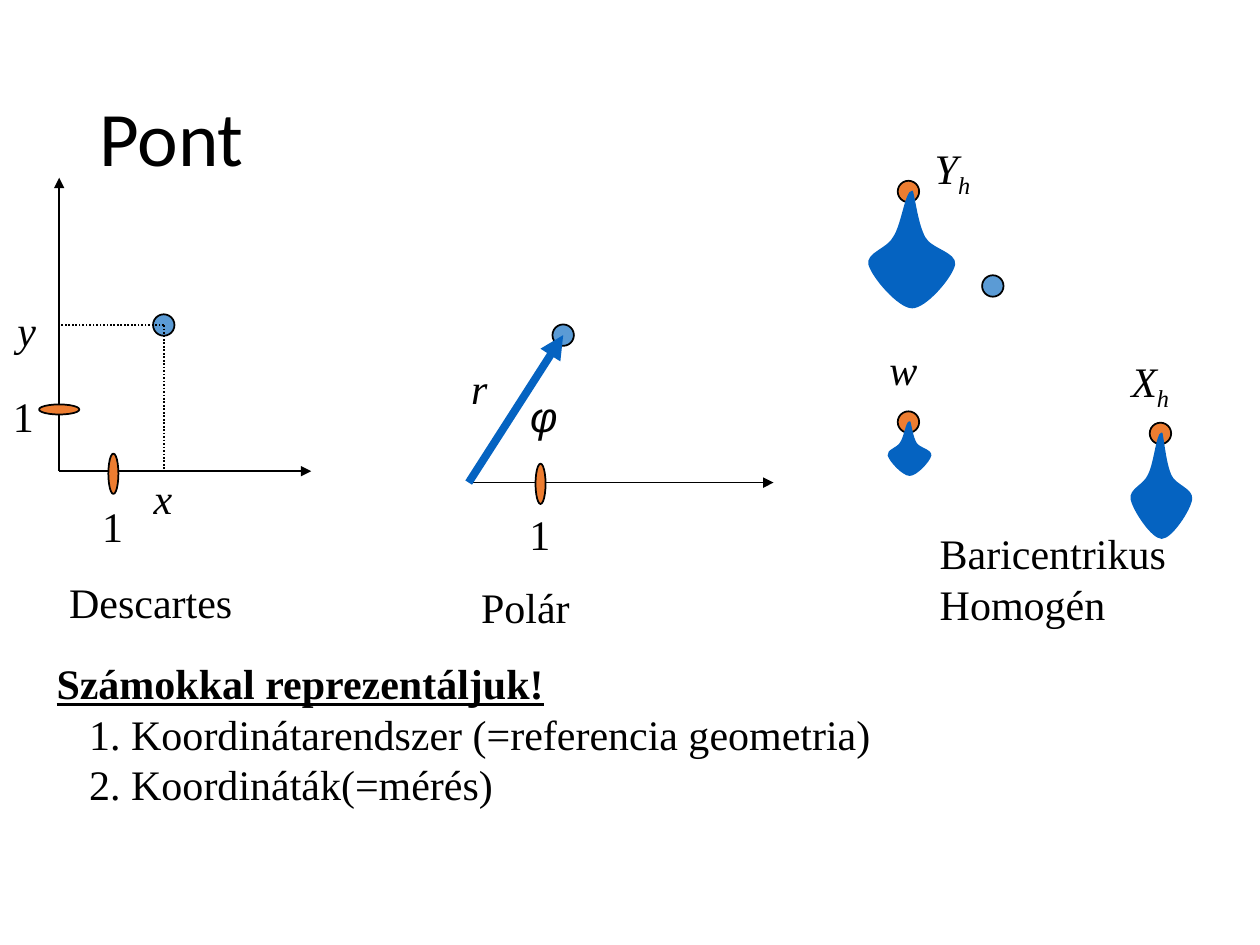
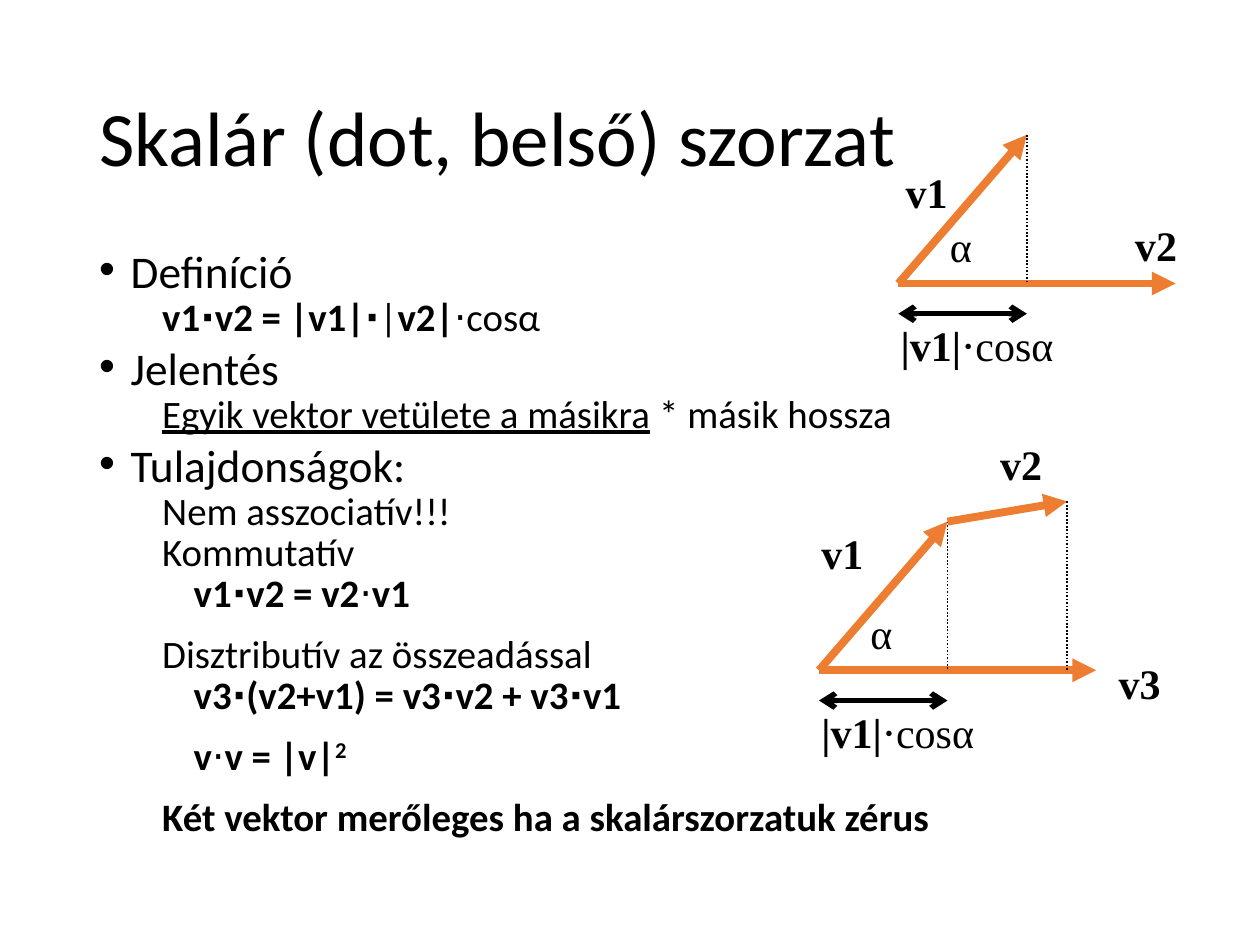
"""Builds two geometry slides: representing a point, and the scalar product."""
from lxml import etree
from pptx import Presentation
from pptx.dml.color import RGBColor
from pptx.enum.dml import MSO_LINE
from pptx.enum.shapes import MSO_CONNECTOR, MSO_SHAPE
from pptx.enum.text import MSO_ANCHOR, MSO_AUTO_SIZE, PP_ALIGN
from pptx.oxml.ns import qn
from pptx.util import Inches, Pt

STRAIGHT = MSO_CONNECTOR.STRAIGHT
OVAL = MSO_SHAPE.OVAL
DOTTED = MSO_LINE.ROUND_DOT
MIDDLE = MSO_ANCHOR.MIDDLE
LEFT, CENTER = PP_ALIGN.LEFT, PP_ALIGN.CENTER
NO_FIT, GROW = MSO_AUTO_SIZE.NONE, MSO_AUTO_SIZE.SHAPE_TO_FIT_TEXT
BLACK, BLUE, SKY, ORANGE = "000000", "0563C1", "5B9BD5", "ED7D31"
SANS, SERIF, SYMBOL = "Calibri", "Times New Roman", "Arial"
BASELINES = {"^": "30000", "_": "-25000"}
MARGIN = 11 / 16
CONTENT_WIDTH = 10 - 2 * MARGIN
color = RGBColor.from_string


def write_runs(para, runs, size, font):
    """Add (text, style) runs; style letters: b, i, u, ^ raised, _ lowered."""
    for text, style in runs:
        span = para.add_run()
        span.text = text
        span.font.name, span.font.size = font, Pt(size)
        span.font.color.rgb = color(BLACK)
        span.font.bold = "b" in style
        span.font.italic = "i" in style
        span.font.underline = "u" in style
        for mark, baseline in BASELINES.items():
            if mark in style:
                span.font._element.set("baseline", baseline)


def draw_line(page, start, end, hue=BLACK, width=1, head=None, tail=None, dash=None):
    """Draw a straight line with optional arrowheads and dashes."""
    line = page.shapes.add_connector(STRAIGHT, *map(Inches, start + end))
    line.line.color.rgb = color(hue)
    line.line.width = Pt(width)
    if dash:
        line.line.dash_style = dash
    properties = line.element.spPr
    outline = properties.find(qn("a:ln"))
    for tag, kind in (("a:headEnd", head), ("a:tailEnd", tail)):
        if kind:
            etree.SubElement(outline, qn(tag), type=kind)
    etree.SubElement(properties, qn("a:effectLst"))


deck = Presentation()
deck.slide_width, deck.slide_height = Inches(10), Inches(7.5)
point_page = deck.slides.add_slide(deck.slide_layouts[5])
product_page = deck.slides.add_slide(deck.slide_layouts[1])

for page, heading in ((point_page, "Pont"), (product_page, "Skalár (dot, belső) szorzat")):
    title = page.shapes.title
    title.left, title.top, title.width, title.height = map(
        Inches, (MARGIN, 0.4, CONTENT_WIDTH, 1.45))
    title.text_frame.vertical_anchor = MIDDLE
    title.text_frame.auto_size = NO_FIT
    para = title.text_frame.paragraphs[0]
    para.alignment, para.line_spacing = LEFT, 0.9
    write_runs(para, [(heading, "")], 44, SANS)

# Slide 1: axes, points, ticks and weights
cartesian_origin, cartesian_point = (0.47, 3.74), (1.3, 2.58)
polar_origin, polar_point = (3.72, 3.83), (4.47, 2.66)
drops = [((7.22, 3.35), 0.35, 0.42), ((9.22, 3.44), 0.5, 0.83), ((7.24, 1.52), 0.71, 0.92)]

for start, end in (
    (cartesian_origin, (0.47, 1.41)),
    (cartesian_origin, (2.47, 3.74)),
    (polar_origin, (6.14, 3.83)),
):
    draw_line(point_page, start, end, tail="triangle")

dots = [(center, 0.17, 0.17, SKY) for center in (cartesian_point, polar_point, (7.88, 2.27))]
dots += [(center, 0.17, 0.17, ORANGE) for center in ((7.21, 3.35), (9.21, 3.44), (7.21, 1.52))]
ticks = [((0.9, 3.76), 0.08, 0.32), ((4.29, 3.84), 0.08, 0.32), ((0.47, 3.25), 0.32, 0.08)]
for (x, y), width, height, hue in dots + [(*tick, ORANGE) for tick in ticks]:
    ellipse = point_page.shapes.add_shape(
        OVAL, *map(Inches, (x - width / 2, y - height / 2, width, height)))
    ellipse.shadow.inherit = False
    ellipse.fill.solid()
    ellipse.fill.fore_color.rgb = color(hue)
    ellipse.line.color.rgb = color(BLACK)
    ellipse.line.width = Pt(1)

for foot in ((cartesian_point[0], cartesian_origin[1]), (cartesian_origin[0], cartesian_point[1])):
    draw_line(point_page, cartesian_point, foot, dash=DOTTED)
draw_line(point_page, polar_origin, polar_point, BLUE, 4.5, tail="triangle")

# Each curve: two control points and an end, as shares of the drop's size
drop_curves = [
    ((-0.07, 0), (-0.11, 0.28), (-0.2, 0.39)),
    ((-0.27, 0.5), (-0.51, 0.53), (-0.48, 0.63)),
    ((-0.44, 0.74), (-0.15, 1), (0, 1)),
    ((0.15, 1), (0.44, 0.74), (0.47, 0.63)),
    ((0.49, 0.53), (0.21, 0.5), (0.14, 0.4)),
    ((0.06, 0.29), (0.03, 0.09), (0, 0)),
]
for (x, y), width, height in drops:
    builder = point_page.shapes.build_freeform(Inches(x), Inches(y))
    builder.add_line_segments(
        [(Inches(x + u * width), Inches(y + v * height)) for *_, (u, v) in drop_curves])
    drop = builder.convert_to_shape()
    for segment, curve in zip(list(drop.element.iter(qn("a:lnTo"))), drop_curves):
        segment.tag = qn("a:cubicBezTo")
        for point in list(segment):
            segment.remove(point)
        for u, v in curve:
            etree.SubElement(segment, qn("a:pt"), x=str(Inches(x + u * width) - drop.left),
                             y=str(Inches(y + v * height) - drop.top))
    drop.shadow.inherit = False
    drop.fill.solid()
    drop.fill.fore_color.rgb = drop.line.color.rgb = color(BLUE)
    drop.line.width = Pt(1)

# Slide 2: statements
body = product_page.placeholders[1]
body.left, body.top, body.width, body.height = map(Inches, (MARGIN, 2, CONTENT_WIDTH, 4.76))
body.text_frame.auto_size = NO_FIT
TOPIC, DETAIL, FORMULA = (0.25, -0.25), (0.5, 0), (0.75, 0)
statements = [
    (TOPIC, 10, [("Definíció", "")]),
    (DETAIL, 5, [("v1⋅v2 = |v1|⋅", "b"), ("|", ""), ("v2|", "b"), ("⋅cosα", "")]),
    (TOPIC, 10, [("Jelentés", "")]),
    (DETAIL, 5, [("Egyik vektor vetülete a másikra", "u"), (" * másik hossza", "")]),
    (TOPIC, 10, [("Tulajdonságok:", "")]),
    (DETAIL, 5, [("Nem asszociatív!!!", "")]),
    (DETAIL, 5, [("Kommutatív", "")]),
    (FORMULA, 5, [("v1⋅v2 = v2", "b"), ("⋅", ""), ("v1", "b")]),
    (DETAIL, 16, [("Disztributív az összeadással", "")]),
    (FORMULA, 5, [("v3⋅(v2+v1) = v3⋅v2 + v3⋅v1", "b")]),
    (FORMULA, 16, [("v", "b"), ("⋅", ""), ("v = |v|", "b"), ("2", "b^")]),
    (DETAIL, 16, [("Két vektor merőleges ha a skalárszorzatuk zérus", "b")]),
]
for index, (indents, gap, runs) in enumerate(statements):
    para = body.text_frame.add_paragraph() if index else body.text_frame.paragraphs[0]
    is_topic = indents == TOPIC
    para.level = 0 if is_topic else 1
    para.line_spacing, para.space_before = 0.7, Pt(gap)
    properties = para._p.get_or_add_pPr()
    properties.set("marL", str(Inches(indents[0])))
    properties.set("indent", str(Inches(indents[1])))
    if is_topic:
        etree.SubElement(properties, qn("a:buFont"), typeface=SYMBOL)
        etree.SubElement(properties, qn("a:buChar"), char="•")
    else:
        etree.SubElement(properties, qn("a:buNone"))
    write_runs(para, runs, 25.9 if is_topic else 22.2, SANS)

# Labels: page, left, top, width, lines, font, alignment
labels = [
    (point_page, x, y, width, [[(text, "i")] + [(sub, "i_") for sub in subscript]], font, LEFT)
    for x, y, width, text, subscript, font in (
        (1.12, 3.7, 0.35, "x", "", SERIF),
        (0.04, 2.37, 0.35, "y", "", SERIF),
        (3.64, 2.83, 0.33, "r", "", SERIF),
        (4.11, 3.05, 0.38, "φ", "", SYMBOL),
        (8.88, 2.77, 0.52, "X", "h", SERIF),
        (7.32, 1.08, 0.5, "Y", "h", SERIF),
        (6.96, 2.68, 0.42, "w", "", SERIF),
    )
]
labels += [
    (point_page, x, y, 0.37, [[("1", "")]], SERIF, CENTER)
    for x, y in ((0.71, 3.92), (0, 3.05), (4.1, 3.99))
]
labels += [
    (point_page, x, y, width, [[(name, "")] for name in names], SERIF, LEFT)
    for x, y, width, names in (
        (0.45, 4.53, 1.51, ["Descartes"]),
        (3.72, 4.57, 0.91, ["Polár"]),
        (7.36, 4.14, 2.01, ["Baricentrikus", "Homogén"]),
    )
]
labels += [
    (product_page, x, y, 0.53, [[(name, "b")]], SERIF, LEFT)
    for x, y, name in (
        (7.09, 1.27, "v1"), (8.91, 1.69, "v2"),
        (6.42, 4.14, "v1"), (7.84, 3.43, "v2"), (8.78, 5.17, "v3"),
    )
]

# Slide 2: the two projection diagrams
for x, y in ((7.13, 2.25), (6.5, 5.32)):
    tip, foot = (x + 1.02, y - 1.18), (x + 1.02, y)
    for end in (tip, (x + 2.2, y)):
        draw_line(product_page, (x, y), end, ORANGE, 4.5, tail="triangle")
    draw_line(product_page, tip, foot, dash=DOTTED)
    draw_line(product_page, (x, y + 0.24), (foot[0], y + 0.24), width=3, head="arrow", tail="arrow")
    labels.append((product_page, x + 0.31, y - 0.55, 0.41, [[("α", "")]], SERIF, LEFT))
    labels.append((product_page, x - 0.08, y + 0.24, 1.42,
                   [[("|v1|", "b"), ("⋅cosα", "")]], SERIF, LEFT))
draw_line(product_page, tip, (8.47, 3.98), ORANGE, 4.5, tail="triangle")
draw_line(product_page, (8.47, 3.98), (8.47, y), dash=DOTTED)

for page, x, y, width, lines, font, alignment in labels:
    box = page.shapes.add_textbox(*map(Inches, (x, y, width, 0.1 + 0.4 * len(lines))))
    box.text_frame.word_wrap = False
    box.text_frame.auto_size = GROW
    for index, runs in enumerate(lines):
        para = box.text_frame.add_paragraph() if index else box.text_frame.paragraphs[0]
        para.alignment = alignment
        write_runs(para, runs, 24, font)

# Slide 1: summary
summary = point_page.shapes.add_textbox(*map(Inches, (0.35, 5.17, 9.65, 1.31))).text_frame
summary.word_wrap = True
summary.auto_size = GROW
write_runs(summary.paragraphs[0], [("Számokkal reprezentáljuk!", "bu")], 24, SERIF)
for text in (" Koordinátarendszer (=referencia geometria)", " Koordináták(=mérés)"):
    para = summary.add_paragraph()
    para.level = 1
    properties = para._p.get_or_add_pPr()
    properties.set("marL", str(Inches(0.5)))
    properties.set("indent", str(Inches(-0.24)))
    etree.SubElement(properties, qn("a:buFontTx"))
    etree.SubElement(properties, qn("a:buAutoNum"), type="arabicPeriod")
    write_runs(para, [(text, "")], 24, SERIF)

deck.save("out.pptx")
